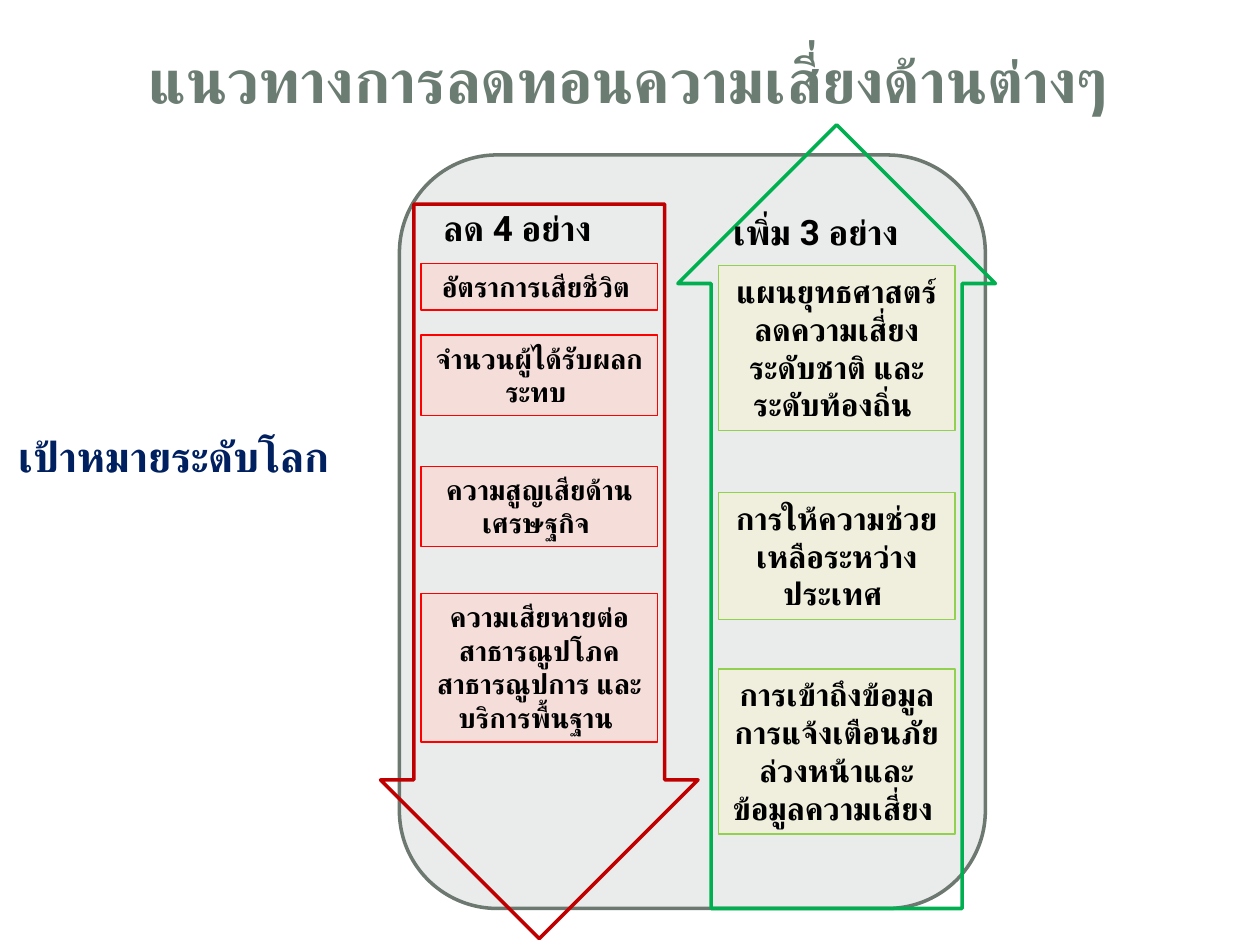
from dataclasses import dataclass

from lxml.etree import SubElement
from pptx import Presentation
from pptx.dml.color import RGBColor
from pptx.enum.shapes import MSO_SHAPE as Shape
from pptx.enum.text import MSO_ANCHOR as Anchor, MSO_AUTO_SIZE as AutoSize, PP_ALIGN as Align
from pptx.oxml.ns import qn
from pptx.util import Inches, Pt


@dataclass(frozen=True)
class Theme:
    font: str = "Roboto"
    title: str = "6B7D72"
    goal: str = "002060"
    text: str = "000000"
    panel_fill: str = "E9ECEB"
    panel_line: str = "6D7871"
    title_size: int = 35
    goal_size: int = 24
    heading_size: int = 20
    thick: float = 2
    thin: float = 0.75


@dataclass(frozen=True)
class Column:
    heading: str
    heading_at: tuple  # offset from the arrow's top left corner
    cards: list  # (text, offset from the arrow's top, height)
    arrow: Shape
    arrow_line: str
    card_fill: str
    card_line: str
    card_size: int


THEME = Theme()
CARD_INSET, CARD_WIDTH = 0.32, 1.88

REDUCE = Column(
    "ลด 4 อย่าง", (0.4, -0.03),
    [("อัตราการเสียชีวิต ", 0.47, 0.37),
     ("จำนวนผู้ได้รับผลกระทบ ", 1.04, 0.64),
     ("ความสูญเสียด้านเศรษฐกิจ ", 2.08, 0.64),
     ("ความเสียหายต่อสาธารณูปโภค สาธารณูปการ และบริการพื้นฐาน ", 3.09, 1.18)],
    Shape.DOWN_ARROW, "C00000", "F5DDD9", "FF0000", 16)

INCREASE = Column(
    "เพิ่ม 3 อย่าง", (0.34, 0.63),
    [("แผนยุทธศาสตร์ ลดความเสี่ยงระดับชาติ และระดับท้องถิ่น ", 1.12, 1.31),
     ("การให้ความช่วยเหลือระหว่างประเทศ ", 2.92, 1.01),
     ("การเข้าถึงข้อมูลการแจ้งเตือนภัยล่วงหน้าและข้อมูลความเสี่ยง ", 4.32, 1.31)],
    Shape.UP_ARROW, "00B050", "F0EFDD", "92D050", 18)


def write(frame, text, size, color, align=Align.LEFT):
    frame.text = text
    paragraph = frame.paragraphs[0]
    paragraph.alignment = align
    run = paragraph.runs[0]
    run.font.name, run.font.size, run.font.bold = THEME.font, Pt(size), True
    run.font.color.rgb = RGBColor.from_string(color)
    # Thai letters take the complex-script font
    SubElement(run.font._element, qn("a:cs")).set("typeface", THEME.font)


def add_outline(slide, kind, box, line, width, fill=None):
    shape = slide.shapes.add_shape(kind, *map(Inches, box))
    shape.shadow.inherit = False
    if fill:
        shape.fill.solid()
        shape.fill.fore_color.rgb = RGBColor.from_string(fill)
    else:
        shape.fill.background()
    shape.line.color.rgb = RGBColor.from_string(line)
    shape.line.width = Pt(width)
    return shape


def add_label(slide, box, text, size, color, wrap=True):
    frame = slide.shapes.add_textbox(*map(Inches, box)).text_frame
    frame.word_wrap = wrap
    frame.auto_size = AutoSize.SHAPE_TO_FIT_TEXT
    write(frame, text, size, color)


def add_title(slide, box, text):
    title = slide.shapes.title
    title.left, title.top, title.width, title.height = map(Inches, box)
    title.text_frame.vertical_anchor = Anchor.MIDDLE
    write(title.text_frame, text, THEME.title_size, THEME.title, Align.CENTER)


def add_arrow(slide, box, column):
    arrow = add_outline(slide, column.arrow, box, column.arrow_line, THEME.thick)
    arrow.adjustments[0], arrow.adjustments[1] = 0.79, 0.5


def add_column(slide, box, column):
    """Place the heading and the cards inside the arrow's box."""
    left, top = box[:2]
    dx, dy = column.heading_at
    add_label(slide, (left + dx, top + dy, 2.18, 0.44),
              column.heading, THEME.heading_size, THEME.text)
    for text, offset, height in column.cards:
        card = add_outline(slide, Shape.RECTANGLE,
                           (left + CARD_INSET, top + offset, CARD_WIDTH, height),
                           column.card_line, THEME.thin, column.card_fill)
        frame = card.text_frame
        frame.word_wrap = True
        frame.auto_size = AutoSize.SHAPE_TO_FIT_TEXT
        frame.vertical_anchor = Anchor.TOP
        write(frame, text, column.card_size, THEME.text, Align.CENTER)


def main():
    deck = Presentation()
    deck.slide_width, deck.slide_height = Inches(10), Inches(7.5)
    slide = deck.slides.add_slide(deck.slide_layouts[5])

    add_title(slide, (0.47, 0.06, 9.03, 1.14), "แนวทางการลดทอนความเสี่ยงด้านต่างๆ")
    add_outline(slide, Shape.ROUNDED_RECTANGLE, (3.17, 1.23, 4.65, 5.98),
                THEME.panel_line, THEME.thick, THEME.panel_fill)
    add_label(slide, (0.05, 3.37, 3.02, 0.5), "เป้าหมายระดับโลก",
              THEME.goal_size, THEME.goal, wrap=False)

    columns = [((3.02, 1.62, 2.52, 5.83), REDUCE),
               ((5.38, 0.99, 2.52, 6.22), INCREASE)]
    for place in (add_arrow, add_column):
        for box, column in columns:
            place(slide, box, column)

    deck.save("out.pptx")


if __name__ == "__main__":
    main()
